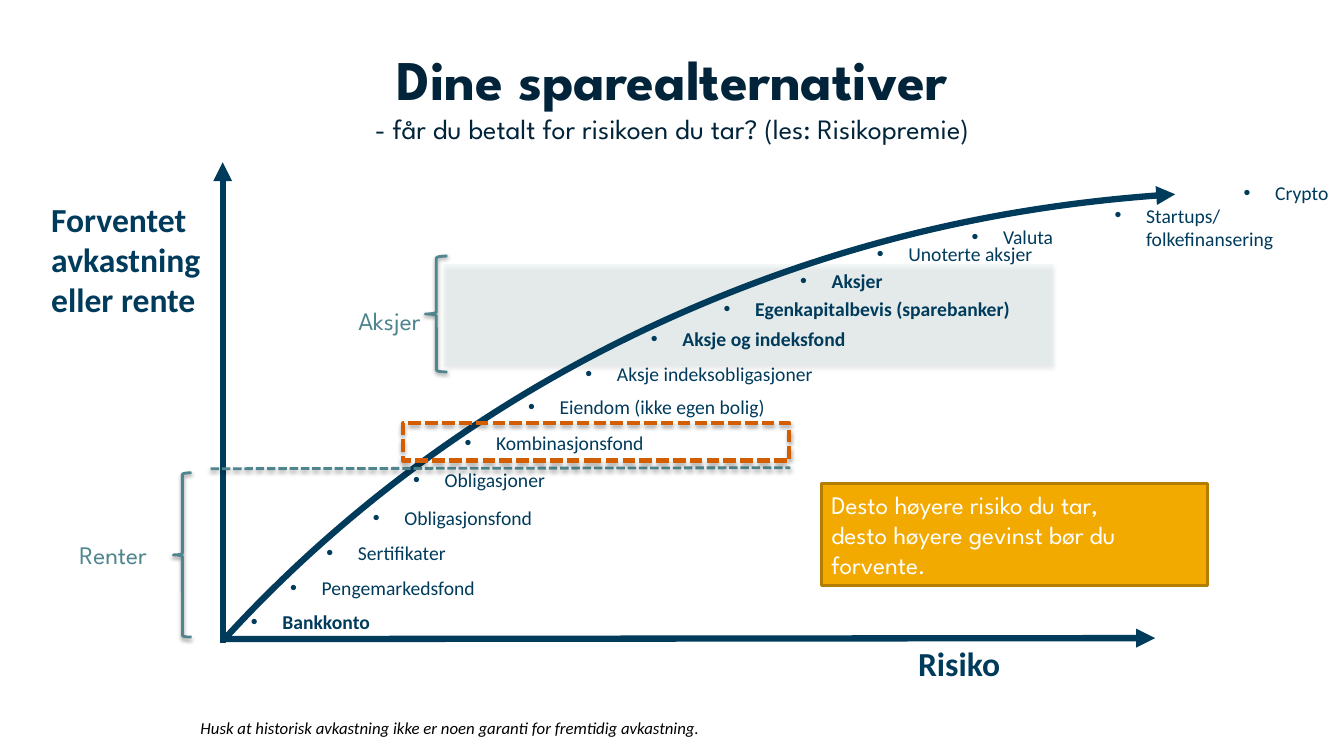
from dataclasses import dataclass

from lxml import etree
from pptx import Presentation
from pptx.dml.color import RGBColor
from pptx.enum.dml import MSO_LINE
from pptx.enum.shapes import MSO_CONNECTOR, MSO_SHAPE
from pptx.enum.text import MSO_ANCHOR, MSO_AUTO_SIZE, PP_ALIGN
from pptx.oxml.ns import qn
from pptx.util import Pt

STRAIGHT = MSO_CONNECTOR.STRAIGHT
RECTANGLE, ROUNDED = MSO_SHAPE.RECTANGLE, MSO_SHAPE.ROUNDED_RECTANGLE
ARC, LEFT_BRACE = MSO_SHAPE.ARC, MSO_SHAPE.LEFT_BRACE
DASH = MSO_LINE.SQUARE_DOT
FIT_SHAPE = MSO_AUTO_SIZE.SHAPE_TO_FIT_TEXT
LEFT, CENTER, RIGHT = PP_ALIGN.LEFT, PP_ALIGN.CENTER, PP_ALIGN.RIGHT
TOP, MIDDLE = MSO_ANCHOR.TOP, MSO_ANCHOR.MIDDLE


@dataclass(frozen=True)
class Theme:
    heading_font: str = "League Spartan"
    body_font: str = "Calibri"
    title: str = "02243A"
    navy: str = "003B5C"
    teal: str = "4F868E"
    mint: str = "D5EBE8"
    gold: str = "F2A900"
    gold_edge: str = "B37D00"
    orange: str = "D45D00"
    white: str = "FFFFFF"
    black: str = "000000"
    title_size: int = 40
    subtitle_size: int = 20
    axis_size: int = 24
    label_size: int = 18
    item_size: int = 14
    note_size: int = 12
    axis_width: float = 4.5
    thin_width: int = 2
    frame_width: int = 3


THEME = Theme()

TITLE = "Dine sparealternativer"
SUBTITLE = "- får du betalt for risikoen du tar? (les: Risikopremie)"
TITLE_BOX = (48.2, -2.2, 864, 140.4)
ADVICE = "Desto høyere risiko du tar, \vdesto høyere gevinst bør du forvente."
ADVICE_BOX = (586.8, 345.6, 275.8, 72.7)
NOTE = "Husk at historisk avkastning ikke er noen garanti for fremtidig avkastning."
NOTE_BOX = (136.1, 509, 670.3, 21.8)
STOCK_BAND = (316.8, 188.6, 435.6, 72.7)
MIXED_FRAME = (288, 302.4, 275.8, 26.6)
CURVE_BOX = (-38.2, 86.4, 2031.1, 2180.9)
CURVE_ROTATION, CURVE_ENDS = 304.5, (166.22, 190.76)
AXES = [(159.1, 459.4, 159.1, 115.9), (157.7, 456.5, 825.1, 455.8)]
AXIS_LABELS = [
    ("Forventet avkastning eller rente", (29.5, 138.2, 134.6, 94.3)),
    ("Risiko", (648.7, 455.8, 99.4, 36)),
]
DIVIDER = (150.5, 334.8, 564.5, 334.1)
RATES = ("Renter", (49.7, 381.6, 100.8, 28.8), LEFT, (123.8, 337.7, 13, 117.4))
STOCKS = ("Aksjer", (205.9, 214.6, 101.5, 28.8), RIGHT, (303.8, 182.9, 15.8, 82.8))
ITEM_HEIGHT, ITEM_INDENT = 24.5, 22.5
SAVINGS = [
    ("Bankkonto", 172.1, 432, 293.8, True),
    ("Pengemarkedsfond", 200.2, 407.5, 293.8, False),
    ("Sertifikater", 226.1, 383, 293.8, False),
    ("Obligasjonsfond", 259.2, 357.8, 293.8, False),
    ("Obligasjoner", 288, 330.5, 293.8, False),
    ("Kombinasjonsfond", 324.7, 304.6, 293.8, False),
    ("Eiendom (ikke egen bolig)", 370.1, 278.6, 293.8, False),
    ("Aksje indeksobligasjoner", 411.1, 254.9, 217.4, False),
    ("Aksje og indeksfond", 457.9, 229.7, 184.3, True),
    ("Egenkapitalbevis (sparebanker)", 509.8, 208.8, 237.6, True),
    ("Aksjer", 564.5, 188.6, 109.4, True),
    ("Unoterte aksjer", 619.2, 169.2, 143.3, False),
    ("Valuta", 686.9, 157, 102.2, False),
    ("Startups/ folkefinansering", 789.1, 141.8, 143.3, False),
    ("Crypto", 881.3, 126, 102.2, False),
]


def points(values):
    return [Pt(value) for value in values]


def color(code):
    return RGBColor.from_string(code)


def style_font(font, name, size, code, bold=False):
    font.name, font.size, font.bold = name, Pt(size), bold
    font.color.rgb = color(code)


def style_line(shape, code, width, dash=None):
    shape.line.color.rgb = color(code)
    shape.line.width = Pt(width)
    if dash:
        shape.line.dash_style = dash


def add_arrowhead(shape):
    etree.SubElement(shape.line._get_or_add_ln(), qn("a:tailEnd"), type="triangle")


def add_effects(shape, shadow=None):
    effects = etree.SubElement(shape._element.spPr, qn("a:effectLst"))
    if shadow:
        alpha, distance = shadow
        outer = etree.SubElement(effects, qn("a:outerShdw"), blurRad=str(Pt(3.1)),
                                 dist=str(Pt(distance)), dir="5400000", rotWithShape="0")
        black = etree.SubElement(outer, qn("a:srgbClr"), val=THEME.black)
        etree.SubElement(black, qn("a:alpha"), val=str(alpha * 1000))


def add_outline(slide, kind, box, fill=None, line=None, shadow=None):
    shape = slide.shapes.add_shape(kind, *points(box))
    if fill:
        shape.fill.solid()
        shape.fill.fore_color.rgb = color(fill)
    else:
        shape.fill.background()
    if line:
        style_line(shape, *line)
    else:
        shape.line.fill.background()
    add_effects(shape, shadow)
    return shape


def add_line(slide, ends, code, width, dash=None, shadow=None):
    line = slide.shapes.add_connector(STRAIGHT, *points(ends))
    style_line(line, code, width, dash)
    add_effects(line, shadow)
    return line


def write(shape, text, name, size, code, bold=False, align=LEFT):
    frame = shape.text_frame
    frame.word_wrap, frame.auto_size, frame.vertical_anchor = True, FIT_SHAPE, TOP
    paragraph = frame.paragraphs[0]
    paragraph.text = text
    paragraph.alignment = align
    style_font(paragraph.font, name, size, code, bold)
    return paragraph


def add_text(slide, box, *style, **options):
    shape = slide.shapes.add_textbox(*points(box))
    return shape, write(shape, *style, **options)


def add_saving(slide, name, left, top, width, bold):
    shape = slide.shapes.add_textbox(*points((left, top, width, ITEM_HEIGHT)))
    properties = shape.text_frame.paragraphs[0]._p.get_or_add_pPr()
    properties.set("marL", str(Pt(ITEM_INDENT)))
    properties.set("indent", str(-Pt(ITEM_INDENT)))
    etree.SubElement(properties, qn("a:buFont"), typeface="Arial")
    etree.SubElement(properties, qn("a:buChar"), char="•")
    write(shape, name, THEME.body_font, THEME.item_size, THEME.navy, bold)


def add_bracket(slide, label, label_box, align, brace_box):
    brace = add_outline(slide, LEFT_BRACE, brace_box,
                        line=(THEME.teal, THEME.thin_width), shadow=(38, 1.6))
    text, _ = add_text(slide, label_box, label, THEME.heading_font,
                       THEME.label_size, THEME.teal, align=align)
    return [brace, text]


def add_title(slide):
    title = slide.shapes.title
    title.left, title.top, title.width, title.height = points(TITLE_BOX)
    title.text_frame.vertical_anchor = MIDDLE
    paragraph = title.text_frame.paragraphs[0]
    paragraph.alignment = CENTER
    for text, size, bold in [(TITLE, THEME.title_size, True),
                             (SUBTITLE, THEME.subtitle_size, False)]:
        if paragraph.runs:
            paragraph.add_line_break()
        run = paragraph.add_run()
        run.text = text
        style_font(run.font, THEME.heading_font, size, THEME.title, bold)


def main():
    presentation = Presentation()
    presentation.slide_width, presentation.slide_height = Pt(960), Pt(540)
    slide = presentation.slides.add_slide(presentation.slide_layouts[5])

    band = add_outline(slide, ROUNDED, STOCK_BAND, fill=THEME.mint, shadow=(35, 1.8))
    band.adjustments[0] = 0
    fill_color = band._element.spPr.find(qn("a:solidFill"))[0]
    etree.SubElement(fill_color, qn("a:alpha"), val="24000")
    add_title(slide)

    curve = add_outline(slide, ARC, CURVE_BOX, line=(THEME.navy, THEME.axis_width))
    curve.rotation = CURVE_ROTATION
    curve.adjustments[0], curve.adjustments[1] = CURVE_ENDS
    add_arrowhead(curve)
    for ends in AXES:
        add_arrowhead(add_line(slide, ends, THEME.navy, THEME.axis_width))
    for label, box in AXIS_LABELS:
        add_text(slide, box, label, THEME.body_font, THEME.axis_size, THEME.navy, bold=True)
    for saving in SAVINGS:
        add_saving(slide, *saving)

    advice = add_outline(slide, RECTANGLE, ADVICE_BOX, fill=THEME.gold,
                         line=(THEME.gold_edge, THEME.thin_width))
    write(advice, ADVICE, THEME.heading_font, THEME.label_size, THEME.white)
    _, note = add_text(slide, NOTE_BOX, NOTE, THEME.body_font, THEME.note_size, THEME.black)
    note.font.italic = True

    divider = add_line(slide, DIVIDER, THEME.teal, THEME.thin_width, DASH, (38, 1.6))
    slide.shapes.add_group_shape([divider, *add_bracket(slide, *RATES)])
    slide.shapes.add_group_shape(add_bracket(slide, *STOCKS))
    add_outline(slide, RECTANGLE, MIXED_FRAME,
                line=(THEME.orange, THEME.frame_width, DASH), shadow=(35, 1.8))
    presentation.save("out.pptx")


if __name__ == "__main__":
    main()
